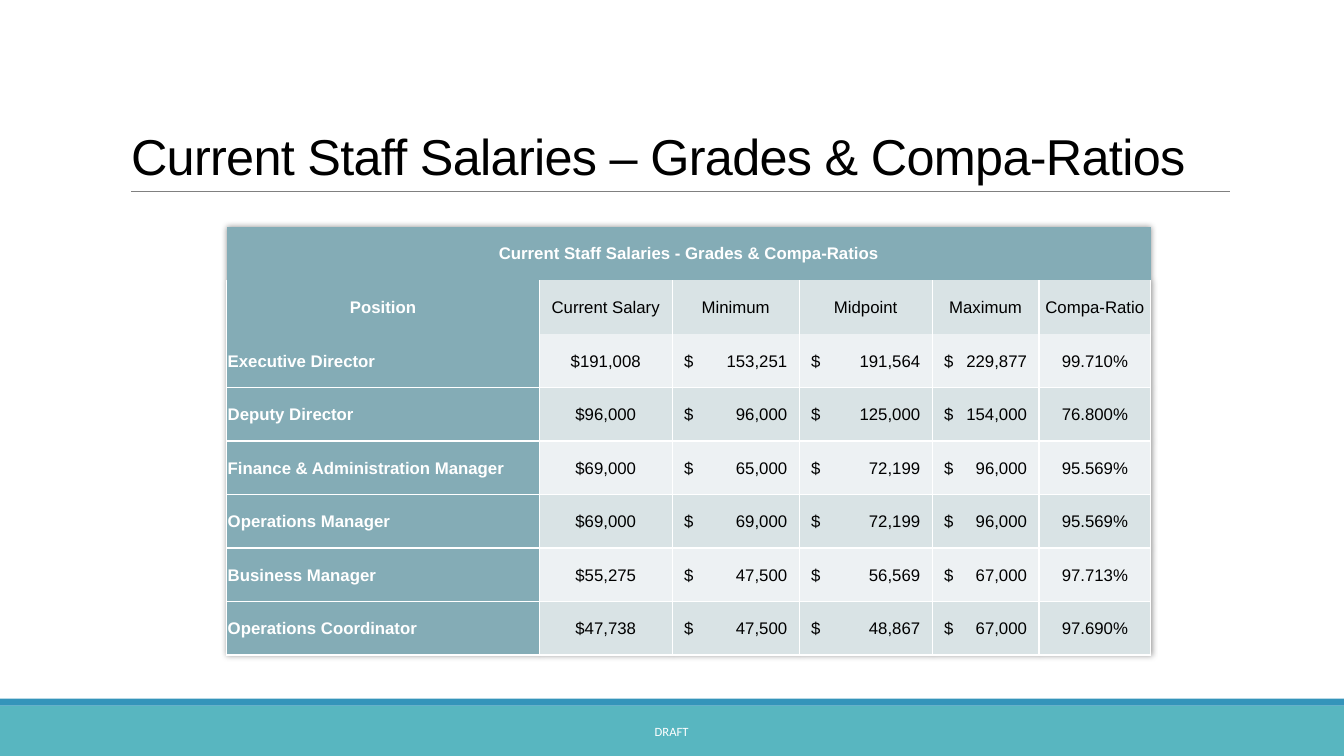
from lxml import etree
from pptx import Presentation
from pptx.dml.color import RGBColor
from pptx.enum.shapes import MSO_CONNECTOR, MSO_SHAPE
from pptx.enum.text import MSO_ANCHOR as ANCHOR, MSO_AUTO_SIZE, PP_ALIGN as ALIGN
from pptx.oxml.ns import qn
from pptx.util import Pt

WHITE = RGBColor(0xFF, 0xFF, 0xFF)
BLACK = RGBColor(0, 0, 0)
GRAY = RGBColor(0x80, 0x80, 0x80)
TEAL = RGBColor(0x58, 0xB6, 0xC0)
BLUE = RGBColor(0x34, 0x94, 0xBA)
HEAD = RGBColor(0x84, 0xAC, 0xB6)
BAND_DARK = RGBColor(0xD9, 0xE3, 0xE5)
BAND_LIGHT = RGBColor(0xED, 0xF1, 0xF3)

SLIDE_W, SLIDE_H = 960, 540
COLUMN_WIDTHS = [223.2, 95, 90.7, 95, 76.3, 79.9]
ROW_HEIGHT = 38.25
MONEY_INSET = 8.5

TABLE_TITLE = "Current Staff Salaries - Grades & Compa-Ratios"
HEADINGS = ["Position", "Current Salary", "Minimum", "Midpoint", "Maximum", "Compa-Ratio"]
STAFF = [
    ["Executive Director", "$191,008", "153,251", "191,564", "229,877", "99.710%"],
    ["Deputy Director", "$96,000", "96,000", "125,000", "154,000", "76.800%"],
    ["Finance & Administration Manager", "$69,000", "65,000", "72,199", "96,000", "95.569%"],
    ["Operations Manager", "$69,000", "69,000", "72,199", "96,000", "95.569%"],
    ["Business Manager", "$55,275", "47,500", "56,569", "67,000", "97.713%"],
    ["Operations Coordinator", "$47,738", "47,500", "48,867", "67,000", "97.690%"],
]


def add_run(p, text, size, color, font="Arial", bold=False):
    r = p.add_run()
    r.text = text
    r.font.size, r.font.name, r.font.bold = Pt(size), font, bold
    r.font.color.rgb = color
    return r


def add_title(s, x, y, w, h):
    sp = s.shapes.title
    sp.left, sp.top, sp.width, sp.height = Pt(x), Pt(y), Pt(w), Pt(h)
    tf = sp.text_frame
    tf.auto_size = MSO_AUTO_SIZE.NONE
    tf.vertical_anchor = ANCHOR.BOTTOM
    p = tf.paragraphs[0]
    p.alignment, p.line_spacing = ALIGN.LEFT, 0.85
    r = add_run(p, "Current Staff Salaries – Grades & Compa-Ratios", 36, BLACK)
    r.font._element.set("spc", "-50")

    rule = s.shapes.add_connector(
        MSO_CONNECTOR.STRAIGHT, Pt(x + 7.5), Pt(y + h), Pt(x + w), Pt(y + h))
    rule.line.color.rgb, rule.line.width = GRAY, Pt(0.5)
    etree.SubElement(rule._element.spPr, qn("a:effectLst"))


def add_footer(s, x, y, w, h):
    stripe = 5
    for top, height, color in ((y + stripe, h - stripe, TEAL), (y, stripe, BLUE)):
        sp = s.shapes.add_shape(MSO_SHAPE.RECTANGLE, Pt(x), Pt(top), Pt(w), Pt(height))
        sp.shadow.inherit = False
        sp.fill.solid()
        sp.fill.fore_color.rgb = color
        sp.line.fill.background()
    label = s.shapes.add_textbox(Pt(x + 290), Pt(y + 9.3), Pt(379.5), Pt(28.75))
    tf = label.text_frame
    tf.word_wrap = True
    tf.vertical_anchor = ANCHOR.MIDDLE
    p = tf.paragraphs[0]
    p.alignment = ALIGN.CENTER
    add_run(p, "DRAFT", 9, WHITE, "Calibri")


def set_borders(cell, sides):
    """Draw white lines on the given sides (of "LRTB") and none on the others."""
    tcPr = cell._tc.get_or_add_tcPr()
    for side in "LRTB":
        ln = etree.SubElement(tcPr, qn(f"a:ln{side}"), w=str(Pt(1)))
        if side in sides:
            fill = etree.SubElement(ln, qn("a:solidFill"))
            etree.SubElement(fill, qn("a:srgbClr"), val=str(WHITE))
        else:
            etree.SubElement(ln, qn("a:noFill"))


def fill_cell(cell, text, fill, sides, align=ALIGN.CENTER, money_width=None):
    """Format a cell; with money_width, put $ at the left and the amount at a right tab."""
    set_borders(cell, sides)
    cell.fill.solid()
    cell.fill.fore_color.rgb = fill
    cell.vertical_anchor = ANCHOR.MIDDLE
    cell.margin_left = cell.margin_right = cell.margin_top = Pt(0.7)
    cell.margin_bottom = 0
    p = cell.text_frame.paragraphs[0]
    p.alignment = align
    if money_width:
        cell.margin_left = Pt(MONEY_INSET)
        tabs = etree.SubElement(p._p.get_or_add_pPr(), qn("a:tabLst"))
        position = Pt(money_width - 2 * MONEY_INSET)
        etree.SubElement(tabs, qn("a:tab"), pos=str(position), algn="r")
        text = f"$\t{text}"
    on_head = fill == HEAD
    add_run(p, text, 12, WHITE if on_head else BLACK, bold=on_head)


def add_table_shadow(table):
    effects = etree.SubElement(table._tbl.tblPr, qn("a:effectLst"))
    table._tbl.tblPr.insert(0, effects)
    shadow = etree.SubElement(effects, qn("a:outerShdw"), blurRad=str(Pt(4)),
                              dist="0", dir="0", algn="ctr", rotWithShape="0")
    color = etree.SubElement(shadow, qn("a:srgbClr"), val=str(BLACK))
    etree.SubElement(color, qn("a:alpha"), val="40000")


def add_salary_table(s, x, y):
    n_rows, n_cols = len(STAFF) + 2, len(HEADINGS)
    table = s.shapes.add_table(n_rows, n_cols, Pt(x), Pt(y), Pt(sum(COLUMN_WIDTHS)),
                               Pt(ROW_HEIGHT * n_rows)).table
    add_table_shadow(table)
    for column, width in zip(table.columns, COLUMN_WIDTHS):
        column.width = Pt(width)
    for row in table.rows:
        row.height = Pt(ROW_HEIGHT)

    table.cell(0, 0).merge(table.cell(0, n_cols - 1))
    fill_cell(table.cell(0, 0), TABLE_TITLE, HEAD, "")
    for j, heading in enumerate(HEADINGS):
        fill_cell(table.cell(1, j), heading, BAND_DARK if j else HEAD, "LR")
    for i, values in enumerate(STAFF):
        band = BAND_DARK if i % 2 else BAND_LIGHT
        sides = "LRTB" if i else "LRB"
        for j, value in enumerate(values):
            is_money = 2 <= j <= 4
            fill_cell(table.cell(i + 2, j), value, band if j else HEAD, sides,
                      ALIGN.LEFT if j == 0 or is_money else ALIGN.CENTER,
                      COLUMN_WIDTHS[j] if is_money else None)


def main():
    prs = Presentation()
    prs.slide_width, prs.slide_height = Pt(SLIDE_W), Pt(SLIDE_H)
    s = prs.slides.add_slide(prs.slide_layouts[5])
    add_footer(s, 0, 499, SLIDE_W, SLIDE_H - 499)
    add_title(s, 86.4, 22.3, 792, 114.3)
    add_salary_table(s, 162, 162)
    prs.save("out.pptx")


if __name__ == "__main__":
    main()
